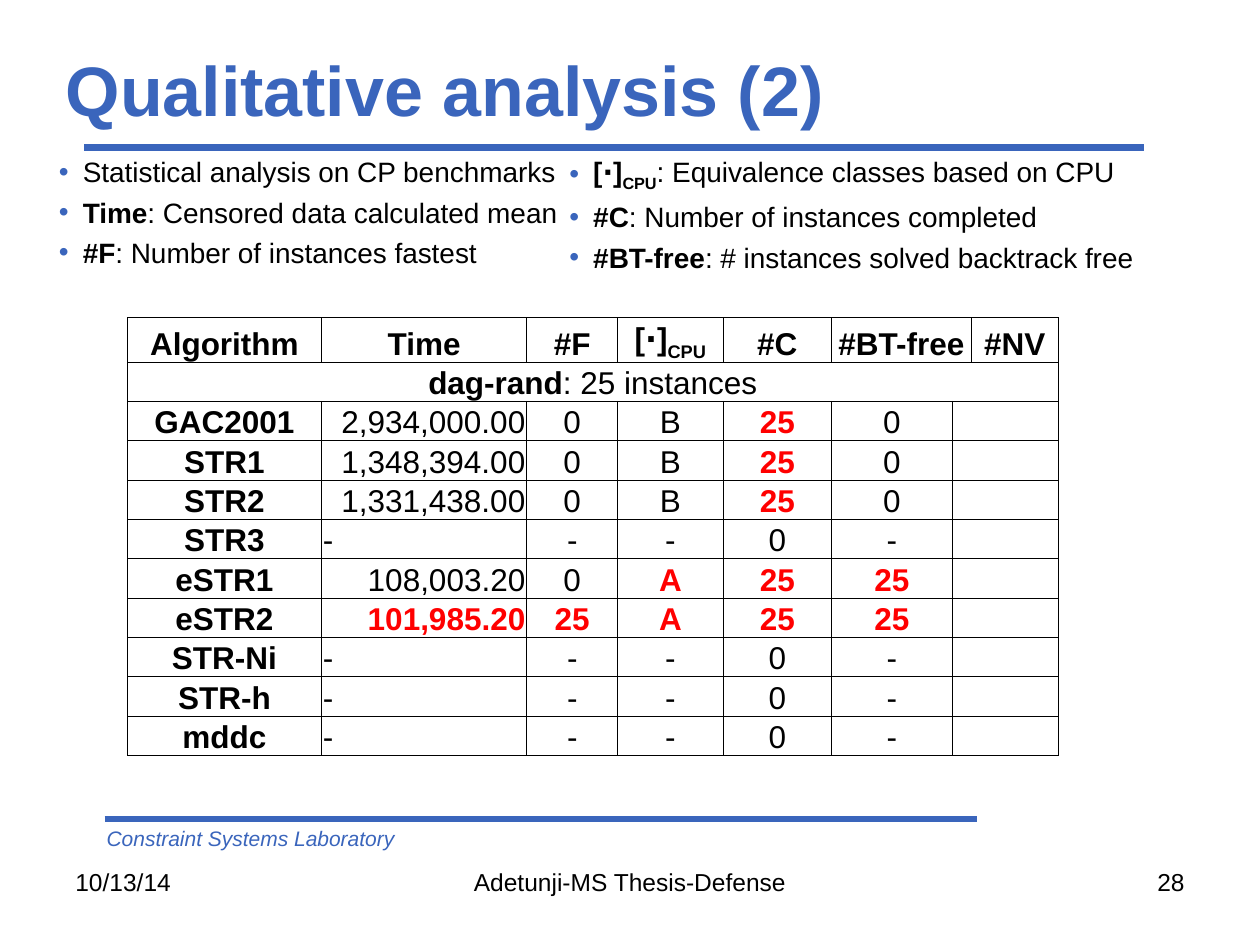
from lxml import etree
from pptx import Presentation
from pptx.dml.color import RGBColor
from pptx.enum import shapes, text
from pptx.oxml import ns
from pptx.util import Cm, Pt

BLUE, BLACK, RED = "3A65BC", "000000", "FF0000"
LEFT, CENTER, RIGHT = text.PP_ALIGN.LEFT, text.PP_ALIGN.CENTER, text.PP_ALIGN.RIGHT

# Content: rich text is a list of (words, style), b = bold, s = subscript
TITLE = "Qualitative analysis (2)"
CPU_CLASS = [("[⋅]", "b"), ("CPU", "bs")]
MEASURES = [  # left, width, bullets
    (0.94, 12.4, [
        [("Statistical analysis on CP benchmarks", "")],
        [("Time", "b"), (": Censored data calculated mean", "")],
        [("#F", "b"), (": Number of instances fastest", "")],
    ]),
    (11.23, 14.5, [
        CPU_CLASS + [(": Equivalence classes based on CPU", "")],
        [("#C", "b"), (": Number of instances completed", "")],
        [("#BT-free", "b"), (": # instances solved backtrack free", "")],
    ]),
]
HEADER = ["Algorithm", "Time", "#F", CPU_CLASS, "#C", "#BT-free", None, "#NV"]
BENCHMARK = [("dag-rand", "b"), (": 25 instances", "")]
RESULTS = [
    ("GAC2001", "2,934,000.00", "0", "B", "25", "0"),
    ("STR1", "1,348,394.00", "0", "B", "25", "0"),
    ("STR2", "1,331,438.00", "0", "B", "25", "0"),
    ("STR3", "-", "-", "-", "0", "-"),
    ("eSTR1", "108,003.20", "0", "A", "25", "25"),
    ("eSTR2", "101,985.20", "25", "A", "25", "25"),
    ("STR-Ni", "-", "-", "-", "0", "-"),
    ("STR-h", "-", "-", "-", "0", "-"),
    ("mddc", "-", "-", "-", "0", "-"),
]
BEST = {"25", "A", "101,985.20"}
COLUMN_WIDTHS = [3.91, 4.14, 1.83, 2.13, 2.18, 2.44, 0.38, 1.75]
ROW_HEIGHT = 0.78
RULES = [(1.7, 23.06, 2.97), (2.11, 19.69, 16.51)]  # start, end, height
FOOTERS = [  # words, left, top, width, height, alignment, size, colour, italic
    ("Constraint Systems Laboratory", 1.9, 16.51, 13.34, 0.76, LEFT, 12, BLUE, True),
    ("10/13/14", 1.27, 17.36, 5.93, 1.31, LEFT, 14, BLACK, False),
    ("Adetunji-MS Thesis-Defense", 8.68, 17.36, 8.04, 1.31, CENTER, 14, BLACK, False),
    ("28", 18.2, 17.36, 5.93, 1.31, RIGHT, 14, BLACK, False),
]


def rgb(value):
    return RGBColor.from_string(value)


def style(font, size, color=BLACK, bold=False, italic=False):
    font.name, font.size = "Arial", Pt(size)
    font.bold, font.italic = bold, italic
    font.color.rgb = rgb(color)


def write(paragraph, parts, size, color=BLACK):
    for words, marks in parts:
        run = paragraph.add_run()
        run.text = words
        style(run.font, size, color, "b" in marks)
        if "s" in marks:
            run.font._element.set("baseline", "-25000")


def add_box(slide, left, top, width, height):
    frame = slide.shapes.add_textbox(Cm(left), Cm(top), Cm(width), Cm(height)).text_frame
    frame.word_wrap = True
    return frame


def add_bullet(paragraph):
    properties = paragraph._p.get_or_add_pPr()
    properties.set("marL", str(Cm(0.48)))
    properties.set("indent", str(Cm(-0.48)))
    color = etree.SubElement(properties, ns.qn("a:buClr"))
    etree.SubElement(color, ns.qn("a:srgbClr"), val=BLUE)
    etree.SubElement(properties, ns.qn("a:buFont"), typeface="Arial")
    etree.SubElement(properties, ns.qn("a:buChar"), char="•")


def add_borders(cell):
    properties = cell._tc.get_or_add_tcPr()
    for index, side in enumerate(("lnL", "lnR", "lnT", "lnB")):
        line = etree.Element(ns.qn("a:" + side), w=str(Pt(0.5)))
        fill = etree.SubElement(line, ns.qn("a:solidFill"))
        etree.SubElement(fill, ns.qn("a:srgbClr"), val=BLACK)
        properties.insert(index, line)


def fill_cell(cell, content, align=CENTER, bold=False, color=BLACK):
    parts = [(content, "b" if bold else "")] if isinstance(content, str) else content
    paragraph = cell.text_frame.paragraphs[0]
    paragraph.alignment = align
    write(paragraph, parts, 18, color)


def add_results(slide):
    rows, columns = len(RESULTS) + 2, len(COLUMN_WIDTHS)
    table = slide.shapes.add_table(rows, columns, Cm(2.57), Cm(6.4),
                                   Cm(sum(COLUMN_WIDTHS)), Cm(ROW_HEIGHT * rows)).table
    table.first_row = table.horz_banding = False
    for column, width in zip(table.columns, COLUMN_WIDTHS):
        column.width = Cm(width)
    for row in table.rows:
        row.height = Cm(ROW_HEIGHT)
        for cell in row.cells:
            cell.margin_left = cell.margin_right = cell.margin_top = Cm(0.03)
            cell.margin_bottom = 0
            cell.vertical_anchor = text.MSO_ANCHOR.BOTTOM
            cell.fill.background()
            add_borders(cell)

    # Header and benchmark rows
    table.cell(0, 5).merge(table.cell(0, 6))
    table.cell(1, 0).merge(table.cell(1, columns - 1))
    for c, heading in enumerate(HEADER):
        if heading:
            fill_cell(table.cell(0, c), heading, bold=True)
    fill_cell(table.cell(1, 0), BENCHMARK)

    # One row per algorithm, best values in red
    for r, result in enumerate(RESULTS, start=2):
        table.cell(r, 6).merge(table.cell(r, 7))
        for c, value in enumerate(result):
            align = CENTER if c != 1 else LEFT if value == "-" else RIGHT
            best = value in BEST
            fill_cell(table.cell(r, c), value, align, c == 0 or best, RED if best else BLACK)


def main():
    deck = Presentation()
    deck.slide_width, deck.slide_height = Cm(25.4), Cm(19.05)
    slide = deck.slides.add_slide(deck.slide_layouts[5])

    # Rules under the title and above the footer
    for start, end, height in RULES:
        rule = slide.shapes.add_connector(shapes.MSO_CONNECTOR.STRAIGHT,
                                          Cm(start), Cm(height), Cm(end), Cm(height))
        rule.line.color.rgb = rgb(BLUE)
        rule.line.width = Pt(4)
        etree.SubElement(rule._element.spPr, ns.qn("a:effectLst"))

    # Title
    title = slide.shapes.title
    title.left, title.top, title.width, title.height = Cm(1.07), Cm(0.84), Cm(22.86), Cm(1.9)
    title.text_frame.text = TITLE
    title.text_frame.vertical_anchor = text.MSO_ANCHOR.MIDDLE
    heading = title.text_frame.paragraphs[0]
    heading.alignment = LEFT
    style(heading.runs[0].font, 40, BLUE, bold=True)

    # Footer
    for words, left, top, width, height, align, size, color, italic in FOOTERS:
        frame = add_box(slide, left, top, width, height)
        frame.text = words
        footer = frame.paragraphs[0]
        footer.alignment = align
        style(footer.runs[0].font, size, color, italic=italic)

    add_results(slide)

    # Explanation of the measures
    for left, width, bullets in MEASURES:
        frame = add_box(slide, left, 3, width, 3.02)
        for index, parts in enumerate(bullets):
            paragraph = frame.add_paragraph() if index else frame.paragraphs[0]
            add_bullet(paragraph)
            if index:
                paragraph.space_before = Pt(3.8)
            write(paragraph, parts, 16)

    deck.save("out.pptx")


if __name__ == "__main__":
    main()
